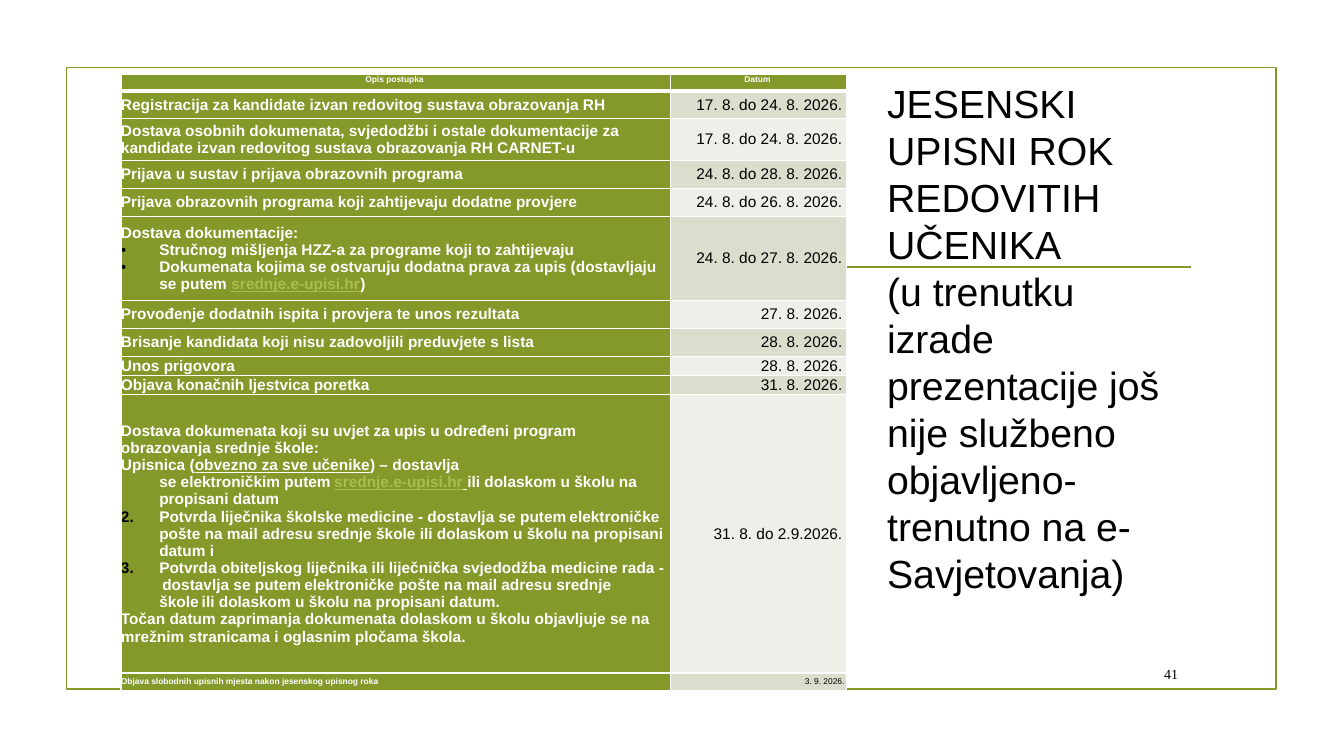
from lxml.etree import SubElement
from pptx import Presentation
from pptx.dml.color import RGBColor
from pptx.enum.shapes import MSO_CONNECTOR as Connector, MSO_SHAPE as Shape
from pptx.enum.text import MSO_ANCHOR as Anchor, MSO_AUTO_SIZE as AutoSize, PP_ALIGN as Align
from pptx.oxml.ns import qn
from pptx.util import Inches, Pt

OLIVE = RGBColor(0x83, 0x99, 0x2A)
LINK = RGBColor(0xA8, 0xBF, 0x4D)
WHITE = RGBColor(0xFF, 0xFF, 0xFF)
BLACK = RGBColor(0, 0, 0)
DATE_BANDS = [RGBColor(0xED, 0xEF, 0xE8), RGBColor(0xD9, 0xDE, 0xCD)]
HARD_SPACES = str.maketrans({"~": chr(0xA0), "¬": chr(0x202F)})  # ~ normal, ¬ narrow

deck = Presentation()
deck.slide_width, deck.slide_height = Inches(13.33), Inches(7.5)
slide = deck.slides.add_slide(deck.slide_layouts[6])


def area(*percents):
    """Shares of the slide in percent, alternating across and down."""
    sides = (deck.slide_width, deck.slide_height)
    return [round(sides[i % 2] * share / 100) for i, share in enumerate(percents)]


def write(paragraph, text, **formats):
    run = paragraph.add_run()
    run.text = text.translate(HARD_SPACES)
    color = formats.pop("color", BLACK)
    for name, value in {"name": "Arial", **formats}.items():
        setattr(run.font, name, value)
    run.font.color.rgb = color


# Frame and divider
frame = slide.shapes.add_shape(Shape.RECTANGLE, *area(4.95, 8.93, 90.02, 82.27))
frame.shadow.inherit = False
frame.fill.background()
divider = slide.shapes.add_connector(Connector.STRAIGHT, *area(11.48, 35.33, 88.6, 35.33))
SubElement(divider._element.spPr, qn("a:effectLst"))
for outline in (frame.line, divider.line):
    outline.color.rgb = OLIVE
    outline.width = Pt(1.25)

# Page number
page = slide.shapes.add_textbox(*area(84.92, 87.07, 4.43, 4.13)).text_frame
page.word_wrap, page.vertical_anchor = True, Anchor.MIDDLE
page.paragraphs[0].alignment = Align.CENTER
write(page.paragraphs[0], "41", name="Times New Roman", size=Pt(10))

# Heading
heading = slide.shapes.add_textbox(*area(65.27, 9.87, 21.9, 76.8)).text_frame
heading.word_wrap, heading.auto_size = True, AutoSize.SHAPE_TO_FIT_TEXT
heading_texts = [
    "JESENSKI UPISNI ROK REDOVITIH UČENIKA",
    "(u trenutku izrade prezentacije još nije službeno objavljeno- trenutno na e-Savjetovanja)",
]
for i, text in enumerate(heading_texts):
    paragraph = heading.paragraphs[0] if i == 0 else heading.add_paragraph()
    paragraph.line_spacing = Pt(33.6)
    write(paragraph, text, size=Pt(28))

# Schedule: row height in percent, paragraphs of (marker, runs), date
PLAIN, UNDERLINED = {}, {"underline": True}
LINKED = {"underline": True, "color": LINK}
schedule = [
    (2.13, [("", [("Opis postupka~", PLAIN)])], "Datum~"),
    (3.73, [("", [("Registracija za kandidate izvan redovitog sustava obrazovanja RH¬~", PLAIN)])],
     "17. 8. do~24. 8.~2026.~"),
    (5.47, [("", [("Dostava osobnih dokumenata, svjedodžbi i ostale dokumentacije za kandidate "
                   "izvan redovitog sustava obrazovanja RH~CARNET-u~", PLAIN)])],
     "17. 8. do~24. 8.~2026.~"),
    (3.73, [("", [("Prijava u sustav i prijava obrazovnih programa~", PLAIN)])],
     "24. 8. do 28. 8.~2026.~"),
    (3.73, [("", [("Prijava obrazovnih programa koji zahtijevaju dodatne provjere~", PLAIN)])],
     "24. 8. do 26. 8.~2026.~"),
    (11.07, [
        ("", [("Dostava dokumentacije:~", PLAIN)]),
        ("•", [("Stručnog mišljenja HZZ-a za programe koji to zahtijevaju~", PLAIN)]),
        ("•", [("Dokumenata kojima se ostvaruju dodatna prava za upis (dostavljaju se putem~", PLAIN),
               ("srednje.e-upisi.hr", LINKED), (")~", PLAIN)]),
    ], "24. 8. do 27. 8.~2026.~"),
    (3.73, [("", [("Provođenje dodatnih ispita i provjera te unos rezultata~", PLAIN)])],
     "27. 8.~2026.~"),
    (3.73, [("", [("Brisanje kandidata koji nisu zadovoljili preduvjete s lista~", PLAIN)])],
     "28. 8.~2026.~"),
    (2.53, [("", [("Unos prigovora~", PLAIN)])], "28. 8.~2026.~"),
    (2.53, [("", [("Objava konačnih ljestvica poretka~", PLAIN)])], "31. 8.~2026.~"),
    (36.8, [
        ("", [("Dostava dokumenata koji su uvjet za upis u određeni program obrazovanja "
               "srednje škole:~", PLAIN)]),
        ("hanging", [("Upisnica (", PLAIN), ("obvezno za sve učenike", UNDERLINED),
                     (") – dostavlja se~elektroničkim~putem¬", PLAIN),
                     ("srednje.e-upisi.hr", LINKED), ("~", UNDERLINED),
                     ("ili~dolaskom u školu~na propisani datum~", PLAIN)]),
        ("2", [("Potvrda liječnika školske medicine - dostavlja se putem¬elektroničke pošte na mail "
                "adresu srednje škole~ili~dolaskom u školu~na propisani datum i~", PLAIN)]),
        ("3", [("Potvrda obiteljskog liječnika ili liječnička svjedodžba medicine rada -¬dostavlja se "
                "putem¬elektroničke pošte na mail adresu srednje škole¬ili~dolaskom u školu~na "
                "propisani datum.~", PLAIN)]),
        ("", [("Točan datum zaprimanja dokumenata dolaskom u školu objavljuje se na mrežnim "
               "stranicama i oglasnim pločama škola.~", PLAIN)]),
    ], "31. 8. do~2.9.2026.~"),
    (2.4, [("", [("Objava slobodnih upisnih mjesta nakon jesenskog upisnog roka~", PLAIN)])],
     "3.~9. 2026.~"),
]
last = len(schedule) - 1
total = sum(height for height, _, _ in schedule)
table = slide.shapes.add_table(len(schedule), 2, *area(9, 9.87, 54.01, total)).table
for column, share in zip(table.columns, (40.88, 13.13)):
    column.width = area(share)[0]

for r, (height, task, date) in enumerate(schedule):
    table.rows[r].height = area(0, height)[1]
    size = Pt(6) if r in (0, last) else Pt(11)
    for c, paragraphs in enumerate((task, [("", [(date, PLAIN)])])):
        cell = table.cell(r, c)
        is_olive = r == 0 or c == 0
        cell_format = {"margin_left": 0, "margin_right": 0, "margin_top": 0, "margin_bottom": 0,
                       "vertical_anchor": Anchor.TOP if r == 0 else Anchor.MIDDLE}
        for name, value in cell_format.items():
            setattr(cell, name, value)

        # Borders, thicker around the header's lower edge
        for side in "LRTB":
            thick = (r, side) in ((0, "B"), (1, "T"))
            border = SubElement(cell._tc.get_or_add_tcPr(), qn("a:ln" + side),
                                w=str(Pt(3 if thick else 1)))
            SubElement(SubElement(border, qn("a:solidFill")), qn("a:srgbClr"), val=str(WHITE))
        cell.fill.solid()
        cell.fill.fore_color.rgb = OLIVE if is_olive else DATE_BANDS[r % 2]

        for i, (marker, runs) in enumerate(paragraphs):
            paragraph = cell.text_frame.paragraphs[0] if i == 0 else cell.text_frame.add_paragraph()
            paragraph.alignment = Align.CENTER if r == 0 else Align.RIGHT if c else Align.LEFT
            if marker:
                props = paragraph._p.get_or_add_pPr()
                props.set("marL", str(Inches(0.38)))
                props.set("indent", str(-Inches(0.38)))
                if marker != "hanging":
                    SubElement(SubElement(props, qn("a:buClr")), qn("a:srgbClr"), val=str(BLACK))
                if marker == "•":
                    SubElement(props, qn("a:buFont"), typeface="Arial")
                    SubElement(props, qn("a:buChar"), char=marker)
                elif marker.isdigit():
                    SubElement(props, qn("a:buAutoNum"), type="arabicPeriod", startAt=marker)
                tabs = SubElement(props, qn("a:tabLst"))
                SubElement(tabs, qn("a:tab"), pos=str(Inches(0.5)), algn="l")
            for text, style in runs:
                write(paragraph, text, **{"size": size, "bold": is_olive,
                                          "color": WHITE if is_olive else BLACK, **style})

deck.save("out.pptx")
